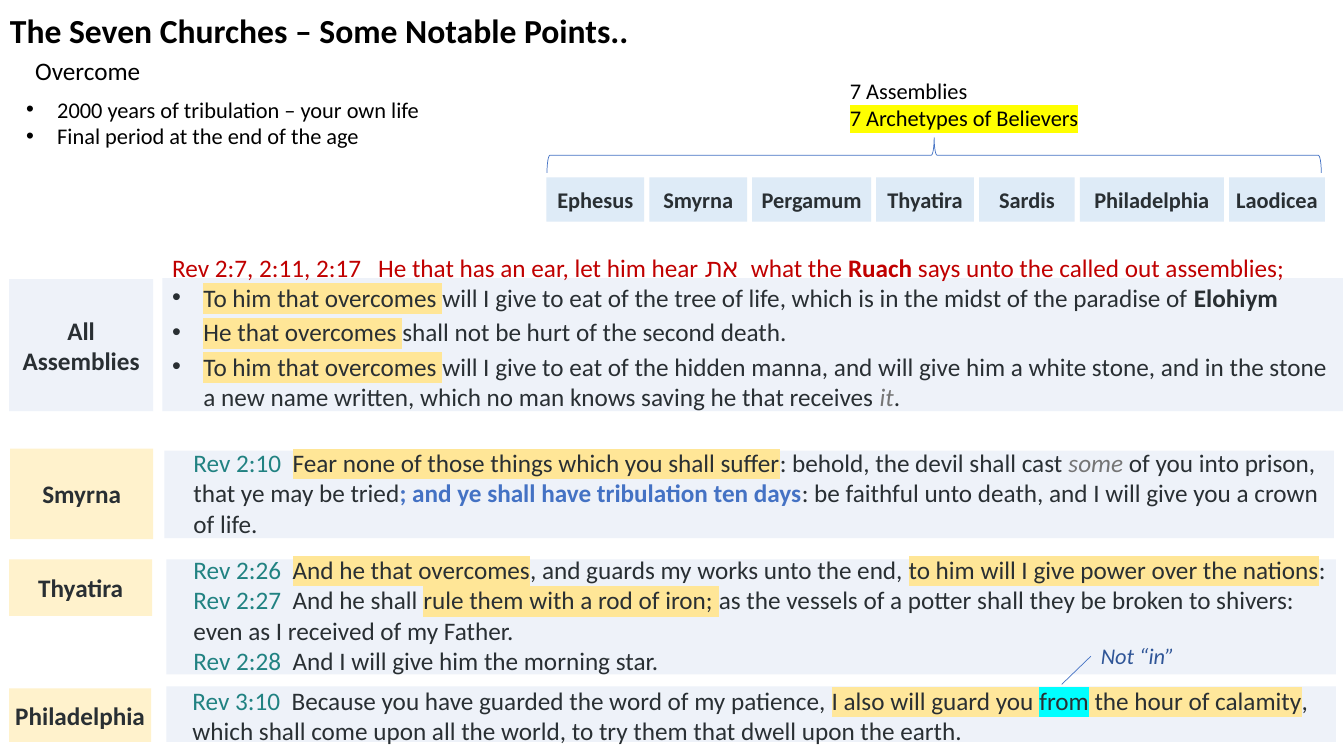
import pptx
import pptx.util
import pptx.dml.color
import pptx.enum.shapes
import pptx.enum.text
import pptx.oxml.ns
import lxml.etree

Inches, Pt = pptx.util.Inches, pptx.util.Pt
qn = pptx.oxml.ns.qn
SHAPE = pptx.enum.shapes.MSO_SHAPE

# Content
BLACK, INK, BLUE = "000000", "292F33", "4472C4"
PALE, CREAM, SKY = "EEF2F9", "FFF2CC", "DEEBF7"

# Run styles: colour, bold, italic, highlight
STYLES = {
    "plain": (BLACK, False, False, None),
    "title": (BLACK, True, False, None),
    "archetype": (BLACK, False, False, "FFFF00"),
    "note": ("2F5597", False, True, None),
    "label": (INK, True, False, None),
    "verse": (INK, False, False, None),
    "ref": ("218282", False, False, None),
    "key": (INK, False, False, "FFE697"),
    "promise": (INK, False, False, "FFE79B"),
    "from": (INK, False, False, "00FFFF"),
    "added": ("757575", False, True, None),
    "days": (BLUE, True, False, None),
    "red": ("C00000", False, False, None),
    "red bold": ("C00000", True, False, None),
}

BANDS = [(1.61, 2.76, 11.71, 1.32), (1.63, 4.47, 11.6, 0.87),
         (1.65, 5.55, 11.6, 1.14), (1.65, 6.81, 11.6, 0.55)]

LABELS = [("All Assemblies", (0.09, 2.77, 1.43, 1.31), PALE),
          ("Smyrna", (0.1, 4.45, 1.42, 0.9), CREAM),
          ("Thyatira", (0.09, 5.55, 1.42, 0.56), CREAM),
          ("Philadelphia", (0.09, 6.83, 1.41, 0.53), CREAM)]

CHURCHES = [("Ephesus", 0.97), ("Smyrna", 0.97), ("Pergamum", 1.18), ("Thyatira", 0.97),
            ("Sardis", 0.95), ("Philadelphia", 1.43), ("Laodicea", 0.95)]
CHURCH_LEFT, CHURCH_TOP, CHURCH_HEIGHT, CHURCH_GAP = 5.42, 1.76, 0.44, 0.05

# Text boxes: place, size, paragraphs of (style, text) runs, first bulleted paragraph, space after
TEXTS = [
    ((0, 0.05, 6.38, 0.62), 24,
     [[("title", "The Seven Churches – Some Notable Points..")]], None, 0),
    ((0.25, 0.5, 1.36, 0.4), 18, [[("plain", "Overcome")]], None, 0),
    ((0.16, 0.9, 4.57, 0.64), 16,
     [[("plain", "2000 years of tribulation – your own life")],
      [("plain", "Final period at the end of the age")]], 0, 0),
    ((8.33, 0.72, 4.24, 0.64), 16,
     [[("plain", "7 Assemblies")], [("archetype", "7 Archetypes of Believers")]], None, 0),
    ((1.61, 2.45, 11.81, 1.7), 18,
     [[("red", "Rev 2:7, 2:11, 2:17   He that has an ear, let him hear את  what the "),
       ("red bold", "Ruach"), ("red", " says unto the called out assemblies;")],
      [("key", "To him that overcomes "),
       ("verse", "will I give to eat of the tree of life, which is in the midst of the paradise of "),
       ("label", "Elohiym")],
      [("key", "He that overcomes "), ("verse", "shall not be hurt of the second death.")],
      [("key", "To him that overcomes "),
       ("verse", "will I give to eat of the hidden manna, and will give him a white stone, "
                 "and in the stone a new name written, which no man knows saving he that receives "),
       ("added", "it"), ("verse", ".")]], 1, 3),
    ((1.82, 4.39, 11.56, 1.01), 18,
     [[("ref", "Rev 2:10  "), ("key", "Fear none of those things which you shall suffer"),
       ("verse", ": behold, the devil shall cast "), ("added", "some"),
       ("verse", " of you into prison, that ye may be tried"),
       ("days", "; and ye shall have tribulation ten days"),
       ("verse", ": be faithful unto death, and I will give you a crown of life.")]], None, 0),
    ((1.82, 5.45, 11.56, 1.31), 18,
     [[("ref", "Rev 2:26  "), ("key", "And he that overcomes"),
       ("verse", ", and guards my works unto the end, "),
       ("key", "to him will I give power over the nations"), ("verse", ":")],
      [("ref", "Rev 2:27"), ("verse", "  And he shall "),
       ("key", "rule them with a rod of iron; "),
       ("verse", "as the vessels of a potter shall they be broken to shivers: "
                 "even as I received of my Father.")],
      [("ref", "Rev 2:28"), ("verse", "  And I will give him the morning star.")]], None, 0),
    ((1.81, 6.75, 11.55, 0.71), 18,
     [[("ref", "Rev 3:10"),
       ("verse", "  Because you have guarded the word of my patience, "),
       ("promise", "I also will guard you "), ("from", "from"),
       ("promise", " the hour of calamity"),
       ("verse", ", which shall come upon all the world, "
                 "to try them that dwell upon the earth.")]], None, 0),
    ((10.82, 6.32, 1.06, 0.37), 16, [[("note", "Not “in”")]], None, 0),
]

prs = pptx.Presentation()
prs.slide_width, prs.slide_height = Inches(13.33), Inches(7.5)
s = prs.slides.add_slide(prs.slide_layouts[6])


def rgb(value):
    return pptx.dml.color.RGBColor.from_string(value)


def style_run(r, style, size):
    color, bold, italic, highlight = STYLES[style]
    f = r.font
    f.size, f.bold, f.italic = Pt(size), bold, italic
    f.color.rgb = rgb(color)
    f.name = "Calibri"
    if highlight:
        mark = lxml.etree.Element(qn("a:highlight"))
        lxml.etree.SubElement(mark, qn("a:srgbClr"), val=highlight)
        r._r.rPr.find(qn("a:latin")).addprevious(mark)


def add_bullet(p):
    pPr = p._p.get_or_add_pPr()
    pPr.set("marL", str(Inches(0.31)))
    pPr.set("indent", str(-Inches(0.31)))
    lxml.etree.SubElement(pPr, qn("a:buFont"), typeface="Arial")
    lxml.etree.SubElement(pPr, qn("a:buChar"), char="•")


def add_text(place, size, paragraphs, first_bullet, space_after):
    tf = s.shapes.add_textbox(*map(Inches, place)).text_frame
    tf.word_wrap = True
    for i, runs in enumerate(paragraphs):
        p = tf.paragraphs[0] if i == 0 else tf.add_paragraph()
        if first_bullet is not None and i >= first_bullet:
            p.space_after = Pt(space_after)
            add_bullet(p)
        for style, text in runs:
            r = p.add_run()
            r.text = text
            style_run(r, style, size)


def add_box(place, fill, text="", size=18):
    sp = s.shapes.add_shape(SHAPE.RECTANGLE, *map(Inches, place))
    sp.shadow.inherit = False
    sp.fill.solid()
    sp.fill.fore_color.rgb = rgb(fill)
    sp.line.fill.background()
    if text:
        tf = sp.text_frame
        tf.word_wrap = True
        tf.margin_left = tf.margin_right = Inches(0.04)
        tf.margin_top = tf.margin_bottom = 0
        tf.vertical_anchor = pptx.enum.text.MSO_ANCHOR.MIDDLE
        p = tf.paragraphs[0]
        p.text = text
        p.alignment = pptx.enum.text.PP_ALIGN.CENTER
        style_run(p.runs[0], "label", size)


# Bands and labels
for place in BANDS:
    add_box(place, PALE)
for name, place, fill in LABELS:
    add_box(place, fill, name)

# Row of seven churches
left = CHURCH_LEFT
for name, width in CHURCHES:
    add_box((left, CHURCH_TOP, width, CHURCH_HEIGHT), SKY, name, 16)
    left += width + CHURCH_GAP

# Brace over the row
brace = s.shapes.add_shape(SHAPE.RIGHT_BRACE, *map(Inches, (9.09, -2.3, 0.35, 7.68)))
brace.rotation = 270
brace.shadow.inherit = False
brace.fill.background()

# Text
for item in TEXTS:
    add_text(*item)

# Pointer to the note
pointer = s.shapes.add_connector(pptx.enum.shapes.MSO_CONNECTOR.STRAIGHT,
                                 *map(Inches, (10.82, 6.51, 10.53, 6.79)))
for sp in (brace, pointer):
    sp.line.color.rgb = rgb(BLUE)
    sp.line.width = Pt(0.5)
lxml.etree.SubElement(pointer._element.spPr, qn("a:effectLst"))

prs.save("out.pptx")
